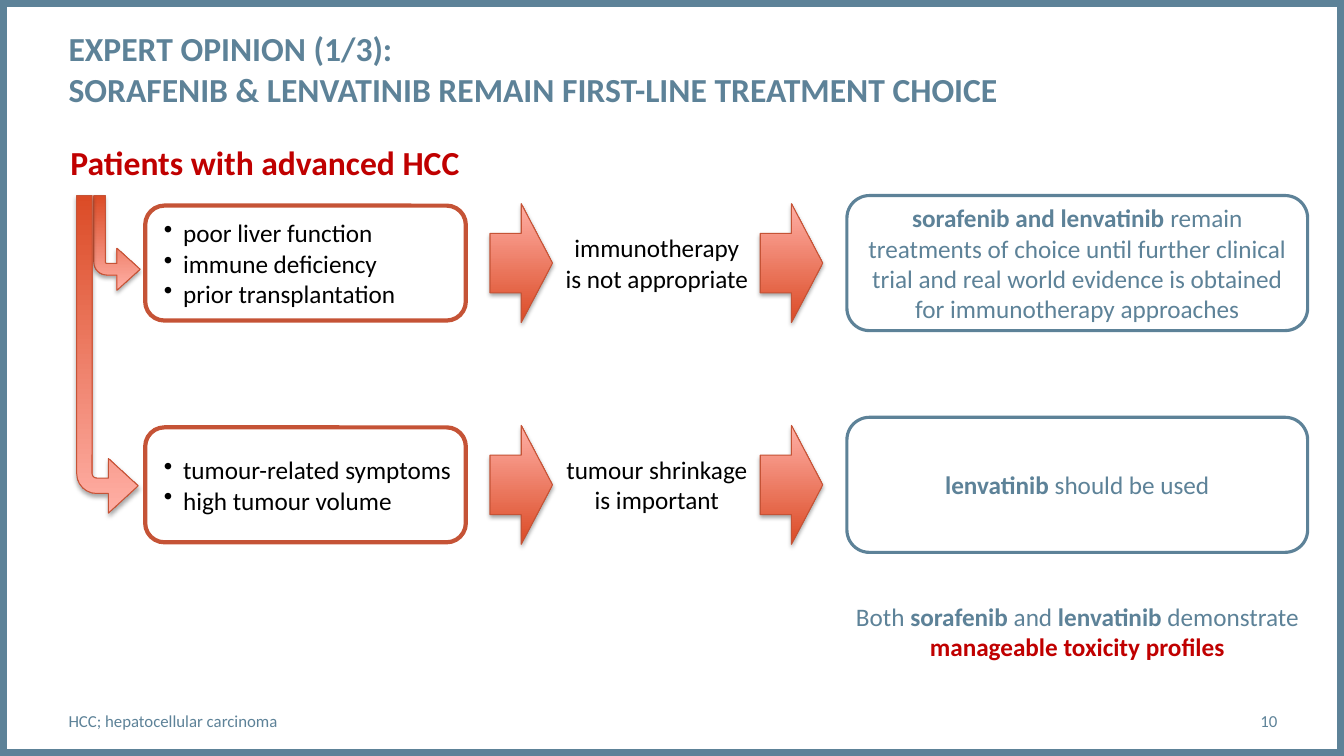
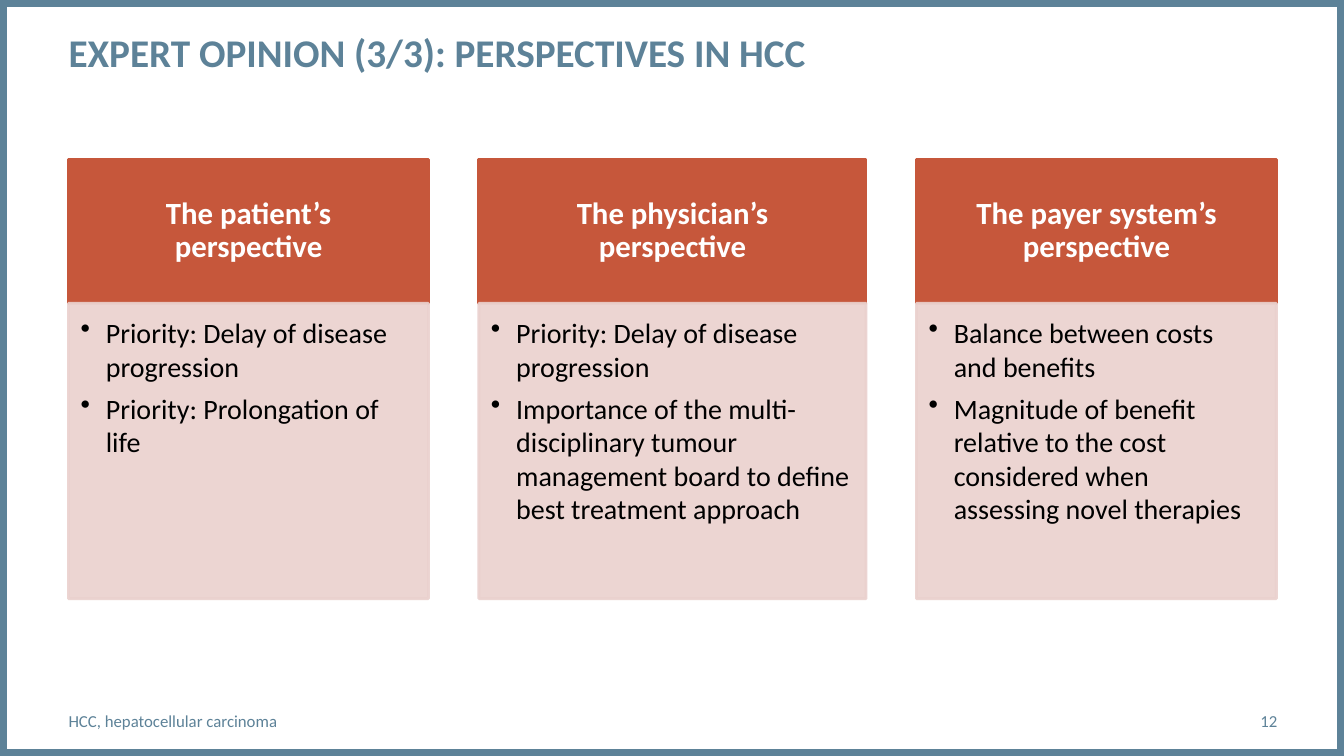
import pptx
import pptx.util
import pptx.dml.color
import pptx.enum.shapes
import pptx.enum.text
import pptx.oxml
import pptx.oxml.ns

Inches, Pt = pptx.util.Inches, pptx.util.Pt
RGB = pptx.dml.color.RGBColor
KIND = pptx.enum.shapes.MSO_SHAPE
ALIGN = pptx.enum.text.PP_ALIGN
ANCHOR = pptx.enum.text.MSO_ANCHOR
qn = pptx.oxml.ns.qn

# Look
FONT = "Calibri"
BLUE = RGB(0x5D, 0x82, 0x98)
RED = RGB(0xC0, 0x00, 0x00)
RUST = RGB(0xC5, 0x53, 0x36)
BRICK = RGB(0xC6, 0x57, 0x3B)
PINK = RGB(0xEA, 0xD1, 0xCE)
DARK = RGB(0xDB, 0x4B, 0x26)
LIGHT = RGB(0xFF, 0xAF, 0xA5)
WHITE = RGB(0xFF, 0xFF, 0xFF)
BLACK = RGB(0x00, 0x00, 0x00)
LEFT = 0.68

# Content: a paragraph is a string or a list of (text, format) runs
BOLD = {"bold": True}
CHOICE = {
    "title": "EXPERT OPINION (1/3):\nSORAFENIB & LENVATINIB REMAIN FIRST-LINE TREATMENT CHOICE",
    "size": 24, "foot": "HCC; hepatocellular carcinoma", "page": "10",
}
OUTLOOK = {
    "title": "EXPERT OPINION (3/3): PERSPECTIVES IN HCC",
    "size": 28, "foot": "HCC, hepatocellular carcinoma", "page": "12",
}
PATHS = [
    (["poor liver function", "immune deficiency", "prior transplantation"],
     "immunotherapy is not appropriate",
     [("sorafenib and lenvatinib ", BOLD),
      ("remain treatments of choice until further clinical trial and real world "
       "evidence is obtained for immunotherapy approaches", {})]),
    (["tumour-related symptoms", "high tumour volume"],
     "tumour shrinkage is important",
     [("lenvatinib ", BOLD), ("should be used", {})]),
]
SAFETY = [("Both ", {}), ("sorafenib", BOLD), (" and ", {}), ("lenvatinib", BOLD),
          (" demonstrate ", {}),
          ("manageable toxicity profiles", {"bold": True, "color": RED})]
# Branch arrows: place and adjustments
BENDS = [
    ((0.93, 1.94, 0.46, 0.94), (0.25, 0.454, 0.5, 0.282)),
    ((0.76, 1.94, 0.61, 3.15), (0.25, 0.444, 0.483, 0.324)),
]
# Columns: width, heading, points
VIEWS = [
    (3.57, "The patient’s perspective",
     ["Priority: Delay of disease progression", "Priority: Prolongation of life"]),
    (3.84, "The physician’s perspective",
     ["Priority: Delay of disease progression",
      "Importance of the multi-disciplinary tumour management board to define "
      "best treatment approach"]),
    (3.57, "The payer system’s perspective",
     ["Balance between costs and benefits",
      "Magnitude of benefit relative to the cost considered when assessing "
      "novel therapies"]),
]


def write(shape, paras, size=18, color=BLACK, bold=False, align=ALIGN.LEFT,
          anchor=ANCHOR.MIDDLE, pad=(0, 0, 0, 0), wrap=True, hang=None,
          after=0, lead=None):
    """Fill a shape with text; hang = (margin, indent) makes bullets."""
    frame = shape.text_frame
    frame.auto_size = pptx.enum.text.MSO_AUTO_SIZE.NONE
    frame.word_wrap = wrap
    frame.vertical_anchor = anchor
    (frame.margin_left, frame.margin_top,
     frame.margin_right, frame.margin_bottom) = map(Inches, pad)
    for num, para in enumerate(paras):
        line = frame.add_paragraph() if num else frame.paragraphs[0]
        props = line._p.get_or_add_pPr()
        margin, indent = hang or (0, 0)
        props.set("marL", str(Inches(margin)))
        props.set("indent", str(Inches(indent)))
        mark = pptx.oxml.ns.nsdecls("a")
        props.append(pptx.oxml.parse_xml(
            f'<a:buChar {mark} char="•"/>' if hang else f"<a:buNone {mark}/>"))
        line.alignment = align
        line.space_before, line.space_after = Pt(0), Pt(after)
        if lead:
            line.line_spacing = lead
        for text, style in [(para, {})] if isinstance(para, str) else para:
            for row, part in enumerate(text.split("\n")):
                if row:
                    line.add_line_break()
                run = line.add_run()
                run.text = part
                run.font.name, run.font.size = FONT, Pt(size)
                run.font.bold = style.get("bold", bold)
                run.font.color.rgb = style.get("color", color)
    return shape


def place(shape, box):
    shape.left, shape.top, shape.width, shape.height = map(Inches, box)
    return shape


def label(slide, box, paras, **style):
    return write(slide.shapes.add_textbox(*map(Inches, box)), paras, **style)


def block(slide, kind, box, fill, edge, width):
    shape = slide.shapes.add_shape(kind, *map(Inches, box))
    shape.shadow.inherit = False
    if fill is None:
        shape.fill.background()
    else:
        shape.fill.solid()
        shape.fill.fore_color.rgb = fill
    shape.line.color.rgb = edge
    shape.line.width = Pt(width)
    return shape


def arrow(slide, kind, box):
    shape = block(slide, kind, box, DARK, RUST, 0.75)
    shape.fill.gradient()
    shape.fill.gradient_angle = 90
    for stop, color, spot in zip(shape.fill.gradient_stops, (DARK, LIGHT), (0, 1)):
        stop.color.rgb, stop.position = color, spot
    shape._element.spPr.find(qn("a:effectLst")).append(pptx.oxml.parse_xml(
        f'<a:outerShdw {pptx.oxml.ns.nsdecls("a")} blurRad="{Pt(3.1)}" '
        f'dist="{Pt(1.8)}" dir="5400000" rotWithShape="0">'
        '<a:srgbClr val="000000"><a:alpha val="35000"/></a:srgbClr></a:outerShdw>'))
    return shape


def fade(shape, share):
    for tint in shape._element.spPr.iter(qn("a:srgbClr")):
        alpha = tint.makeelement(qn("a:alpha"), {"val": str(share * 1000)})
        tint.append(alpha)


def start(deck, layout, info):
    """New slide with title, footnote and page number."""
    slide = deck.slides.add_slide(layout)
    write(place(slide.shapes.title, (LEFT, 0.28, 10.82, 0.94)), [info["title"]],
          size=info["size"], color=BLUE, bold=True, anchor=ANCHOR.TOP)
    write(place(slide.placeholders[1], (LEFT, 6.95, 8.88, 0.4)), [info["foot"]],
          size=12, color=BLUE)
    label(slide, (11.5, 6.95, 1.17, 0.4), [info["page"]], size=12, color=BLUE,
          align=ALIGN.RIGHT)
    return slide


def choice(slide):
    label(slide, (0.6, 1.36, 4.18, 0.5), ["Patients with advanced HCC"], size=24,
          color=RED, bold=True, wrap=False, pad=(0.1, 0.05, 0.1, 0.05))
    for box, bends in BENDS:
        bend = arrow(slide, KIND.BENT_ARROW, box)
        bend.rotation = 180
        bend._element.spPr.xfrm.set("flipH", "1")
        for num, value in enumerate(bends):
            bend.adjustments[num] = value
    # One row per patient group, centred on mid
    for row, (signs, reason, drug) in enumerate(PATHS):
        mid = 2.61 + 2.2 * row
        group = block(slide, KIND.ROUNDED_RECTANGLE, (1.44, mid - 0.57, 3.18, 1.14),
                      None, RUST, 3)
        write(group, signs, hang=(0.32, -0.19))
        for left in (4.86, 7.54):
            arrow(slide, KIND.RIGHT_ARROW, (left, mid - 0.59, 0.62, 1.18))
        label(slide, (5.5, mid - 0.35, 2.03, 0.7), [reason], align=ALIGN.CENTER,
              pad=(0.1, 0.05, 0.1, 0.05))
        pick = block(slide, KIND.ROUNDED_RECTANGLE, (8.4, mid - 0.67, 4.57, 1.34),
                     WHITE, BLUE, 2.25)
        write(pick, [drug], color=BLUE, align=ALIGN.CENTER,
              pad=(0.1, 0.05, 0.1, 0.05))
    label(slide, (8.36, 5.72, 4.65, 1.09), [SAFETY], color=BLUE,
          align=ALIGN.CENTER, pad=(0.05, 0, 0.05, 0))


def outlook(slide):
    left, top, head, body, gap = LEFT, 1.58, 1.43, 2.93, 0.5
    for width, name, points in VIEWS:
        cap = block(slide, KIND.RECTANGLE, (left, top, width, head), BRICK, BRICK, 2)
        write(cap, [name], size=22, color=WHITE, bold=True, align=ALIGN.CENTER,
              pad=(0.35, 0.1, 0.35, 0.1), lead=0.9)
        card = block(slide, KIND.RECTANGLE, (left, top + head, width, body),
                     PINK, PINK, 2)
        fade(card, 90)
        write(card, points, size=20, anchor=ANCHOR.TOP, hang=(0.25, -0.25), after=6,
              pad=(0.12, 0.12, 0.16, 0.17))
        left += width + gap


def main():
    deck = pptx.Presentation()
    deck.slide_width, deck.slide_height = Inches(13.33), Inches(7.5)
    layout = deck.slide_layouts[1]
    first = start(deck, layout, CHOICE)
    # Shared frame, moved to the layout
    frame = block(first, KIND.RECTANGLE, (0, 0, 13.33, 7.5), None, BLUE, 10)
    layout.shapes.element.append(frame._element)
    choice(first)
    outlook(start(deck, layout, OUTLOOK))
    deck.save("out.pptx")


if __name__ == "__main__":
    main()
